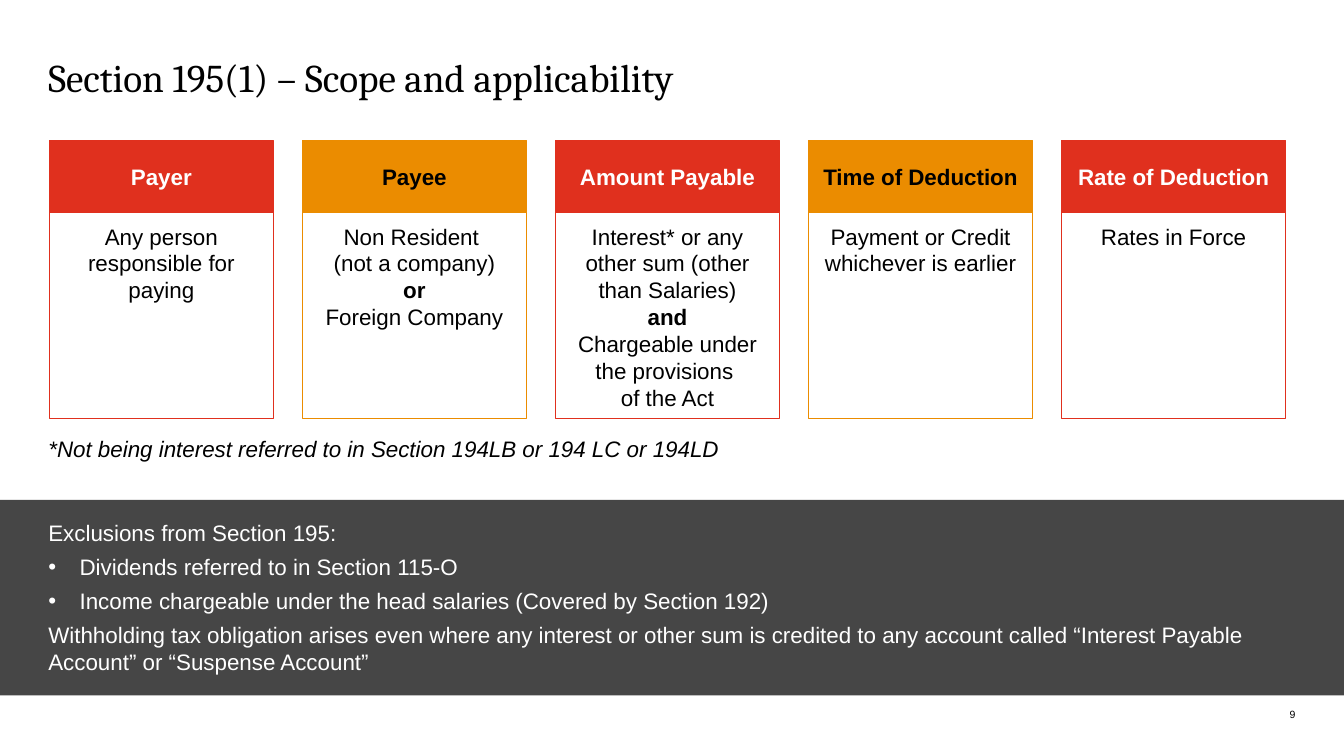
from copy import deepcopy
from dataclasses import dataclass

from lxml import etree
from pptx import Presentation
from pptx import util as u
from pptx.dml.color import RGBColor
from pptx.enum import shapes, text
from pptx.oxml.ns import qn


@dataclass(frozen=True)
class Theme:
    red: str = "E0301E"
    orange: str = "EB8C00"
    grey: str = "464646"
    black: str = "000000"
    white: str = "FFFFFF"
    heading_font: str = "Cambria"
    body_font: str = "Arial"
    title_size: float = 28
    body_size: float = 16
    number_size: float = 7.5


T = Theme()
ALIGN, ANCHOR = text.PP_ALIGN, text.MSO_ANCHOR
BULLET_INDENT = 0.31

# Header, header fill, header text colour, paragraphs of (text, bold)
COLUMNS = [
    ("Payer", T.red, T.white, [("Any person responsible for paying", False)]),
    ("Payee", T.orange, T.black, [
        ("Non Resident \v(not a company)", False),
        ("or", True),
        ("Foreign Company", False)]),
    ("Amount Payable", T.red, T.white, [
        ("Interest* or any other sum (other than Salaries)", False),
        ("and", True),
        ("Chargeable under the provisions \vof the Act", False)]),
    ("Time of Deduction", T.orange, T.black,
     [("Payment or Credit whichever is earlier", False)]),
    ("Rate of Deduction", T.red, T.white, [("Rates in Force", False)]),
]

# Text, bulleted
EXCLUSIONS = [
    ("Exclusions from Section 195:", False),
    ("Dividends referred to in Section 115-O", True),
    ("Income chargeable under the head salaries (Covered by Section 192)", True),
    ("Withholding tax obligation arises even where any interest or other sum is "
     "credited to any account called “Interest Payable Account” or "
     "“Suspense Account”", False),
]


def set_attrs(obj, values):
    for name, value in values.items():
        setattr(obj, name, value)


def add_rect(slide, box, fill, line=None, width=1):
    sp = slide.shapes.add_shape(shapes.MSO_SHAPE.RECTANGLE, *map(u.Inches, box))
    sp.shadow.inherit = False
    sp.fill.solid()
    sp.fill.fore_color.rgb = RGBColor.from_string(fill)
    if line:
        sp.line.color.rgb = RGBColor.from_string(line)
        sp.line.width = u.Pt(width)
    else:
        sp.line.fill.background()
    return sp


def write(sp, lines, color=T.black, font=T.body_font, size=T.body_size, italic=False,
          align=ALIGN.LEFT, anchor=ANCHOR.TOP, inset=(0, 0)):
    """Fill a shape with (text, bold) paragraphs; inset is horizontal, vertical."""
    tf = sp.text_frame
    dx, dy = map(u.Inches, inset)
    set_attrs(tf, dict(word_wrap=True, vertical_anchor=anchor, margin_left=dx,
                       margin_right=dx, margin_top=dy, margin_bottom=dy))
    for i, (words, bold) in enumerate(lines):
        p = tf.add_paragraph() if i else tf.paragraphs[0]
        p.text = words
        p.alignment = align
        for r in p.runs:
            set_attrs(r.font, dict(name=font, size=u.Pt(size), bold=bold, italic=italic))
            r.font.color.rgb = RGBColor.from_string(color)
        for br in p._p.findall(qn("a:br")):
            br.append(deepcopy(p.runs[0]._r.rPr))
    return tf


def add_text(slide, box, lines, **style):
    return write(slide.shapes.add_textbox(*map(u.Inches, box)), lines, **style)


def add_bullet(p):
    indent = u.Inches(BULLET_INDENT)
    pPr = p._p.get_or_add_pPr()
    pPr.set("marL", str(indent))
    pPr.set("indent", str(-indent))
    etree.SubElement(pPr, qn("a:buFont")).set("typeface", T.body_font)
    etree.SubElement(pPr, qn("a:buChar")).set("char", "•")


def add_column(slide, box, header, fill, color, lines, header_height=0.72):
    x, y, w, h = box
    head = add_rect(slide, (x, y, w, header_height), fill, fill, 0.75)
    write(head, [(header, True)], color, align=ALIGN.CENTER, anchor=ANCHOR.MIDDLE,
          inset=(0.1, 0.05))
    body = add_rect(slide, (x, y + header_height, w, h - header_height), T.white, fill)
    write(body, lines, align=ALIGN.CENTER, inset=(0.1, 0.1))


def add_columns(slide, box, gap=0.29):
    x, y, w, h = box
    width = (w - gap * (len(COLUMNS) - 1)) / len(COLUMNS)
    for i, column in enumerate(COLUMNS):
        add_column(slide, (x + i * (width + gap), y, width, h), *column)


def add_exclusions(slide, box):
    x, y, w, h = box
    add_rect(slide, box, T.grey)
    tf = add_text(slide, (x + 0.48, y + 0.19, w - 0.67, h - 0.38),
                  [(words, False) for words, _ in EXCLUSIONS], color=T.white)
    for p, (_, bulleted) in zip(tf.paragraphs, EXCLUSIONS):
        p.space_after = u.Pt(5.2)
        if bulleted:
            p.level = 1
            add_bullet(p)


def main():
    prs = Presentation()
    prs.slide_width, prs.slide_height = u.Inches(13.33), u.Inches(7.5)
    slide = prs.slides.add_slide(prs.slide_layouts[6])
    add_text(slide, (0.48, 0.53, 12.36, 0.7),
             [("Section 195(1) – Scope and applicability", False)],
             font=T.heading_font, size=T.title_size)
    add_columns(slide, (0.49, 1.39, 12.26, 2.76))
    add_text(slide, (0.48, 4.32, 8.68, 0.27),
             [("*Not being interest referred to in Section 194LB or 194 LC or 194LD", False)],
             italic=True)
    add_exclusions(slide, (0, 4.96, 13.33, 1.94))
    add_text(slide, (12.39, 7, 0.46, 0.15), [("9", False)], size=T.number_size,
             align=ALIGN.RIGHT, anchor=ANCHOR.BOTTOM)
    prs.save("out.pptx")


if __name__ == "__main__":
    main()
